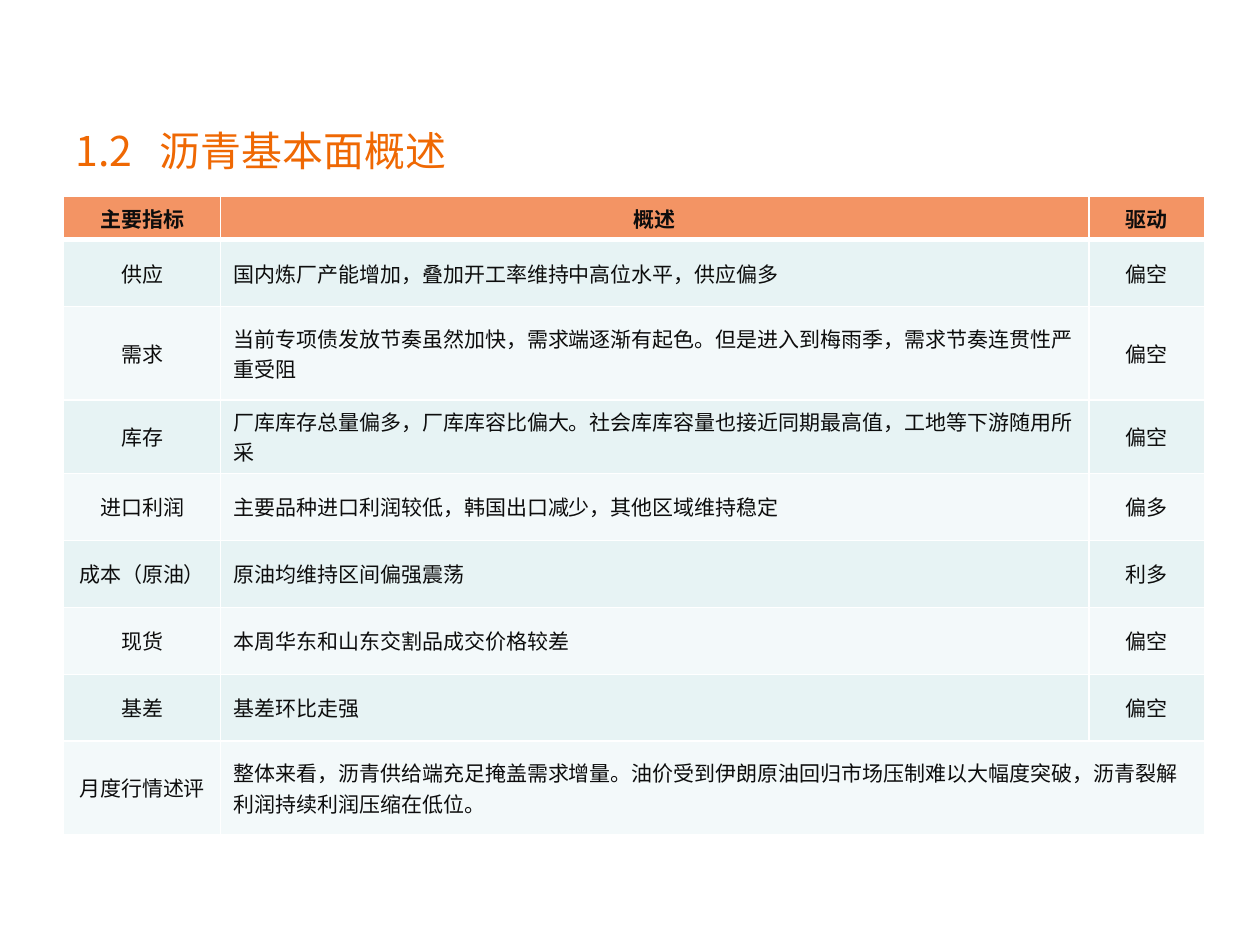
"""Build the slide that sums up bitumen fundamentals in one table."""
from lxml.etree import SubElement as Sub
from pptx import Presentation
from pptx.dml.color import RGBColor
from pptx.enum.lang import MSO_LANGUAGE_ID as Lang
from pptx.enum.text import MSO_ANCHOR as Anchor, PP_ALIGN as Align
from pptx.oxml.ns import qn
from pptx.util import Cm, Pt

FACE = "Noto Sans CJK SC"
WHITE = "FFFFFF"


def add_run(para, text, size, color, bold=False):
    run = para.add_run()
    run.text = text
    font = run.font
    font.size, font.bold, font.name = Pt(size), bold, FACE
    font.language_id = Lang.SIMPLIFIED_CHINESE
    font.color.rgb = RGBColor.from_string(color)
    Sub(font._element, qn("a:ea"), typeface=FACE)


def add_edge(cell, side, width):
    line = Sub(cell._tc.get_or_add_tcPr(), qn(f"a:ln{side}"), w=str(Pt(width)))
    Sub(Sub(line, qn("a:solidFill")), qn("a:srgbClr"), val=WHITE)


rows = [
    ("主要指标", "概述", "驱动"),
    ("供应", "国内炼厂产能增加，叠加开工率维持中高位水平，供应偏多", "偏空"),
    ("需求", "当前专项债发放节奏虽然加快，需求端逐渐有起色。但是进入到梅雨季，需求节奏连贯性严重受阻", "偏空"),
    ("库存", "厂库库存总量偏多，厂库库容比偏大。社会库库容量也接近同期最高值，工地等下游随用所采", "偏空"),
    ("进口利润", "主要品种进口利润较低，韩国出口减少，其他区域维持稳定", "偏多"),
    ("成本（原油）", "原油均维持区间偏强震荡", "利多"),
    ("现货", "本周华东和山东交割品成交价格较差", "偏空"),
    ("基差", "基差环比走强", "偏空"),
    ("月度行情述评", "整体来看，沥青供给端充足掩盖需求增量。油价受到伊朗原油回归市场压制难以大幅度突破，沥青裂解利润持续利润压缩在低位。", ""),
]
wides = [3.17, 17.5, 2.34]
highs = [0.82, 1.35, 1.88, 1.35, 1.35, 1.35, 1.35, 1.35, 1.88]

deck = Presentation()
deck.slide_width, deck.slide_height = Cm(25.4), Cm(19.05)
slide = deck.slides.add_slide(deck.slide_layouts[6])

frame = slide.shapes.add_table(
    len(rows), len(wides), Cm(1.28), Cm(3.96), Cm(sum(wides)), Cm(sum(highs)))
table = frame.table
for col, wide in zip(table.columns, wides):
    col.width = Cm(wide)
for row, high in zip(table.rows, highs):
    row.height = Cm(high)
table.cell(8, 1).merge(table.cell(8, 2))

for r, row in enumerate(rows):
    head = r == 0
    fill = "F39464" if head else ("F3F9FA", "E7F3F4")[r % 2]
    for c, text in enumerate(row):
        cell = table.cell(r, c)
        for side in "LRTB":
            thick = (head and side == "B") or (r == 1 and side == "T")
            add_edge(cell, side, 3 if thick else 1)
        cell.fill.solid()
        cell.fill.fore_color.rgb = RGBColor.from_string(fill)
        cell.vertical_anchor = Anchor.MIDDLE
        if text:
            para = cell.text_frame.paragraphs[0]
            para.alignment = Align.LEFT if c == 1 and not head else Align.CENTER
            add_run(para, text, 12, "0D0D0D", head)

title = slide.shapes.add_textbox(Cm(1.27), Cm(2.41), Cm(22.86), Cm(1.22))
title.text_frame.word_wrap = True
title.text_frame.vertical_anchor = Anchor.MIDDLE
para = title.text_frame.paragraphs[0]
tabs = Sub(para._p.get_or_add_pPr(), qn("a:tabLst"))
Sub(tabs, qn("a:tab"), pos=str(Cm(1.7)), algn="l")
add_run(para, "1.2\t沥青基本面概述", 23.4, "EF6803")

deck.save("out.pptx")
